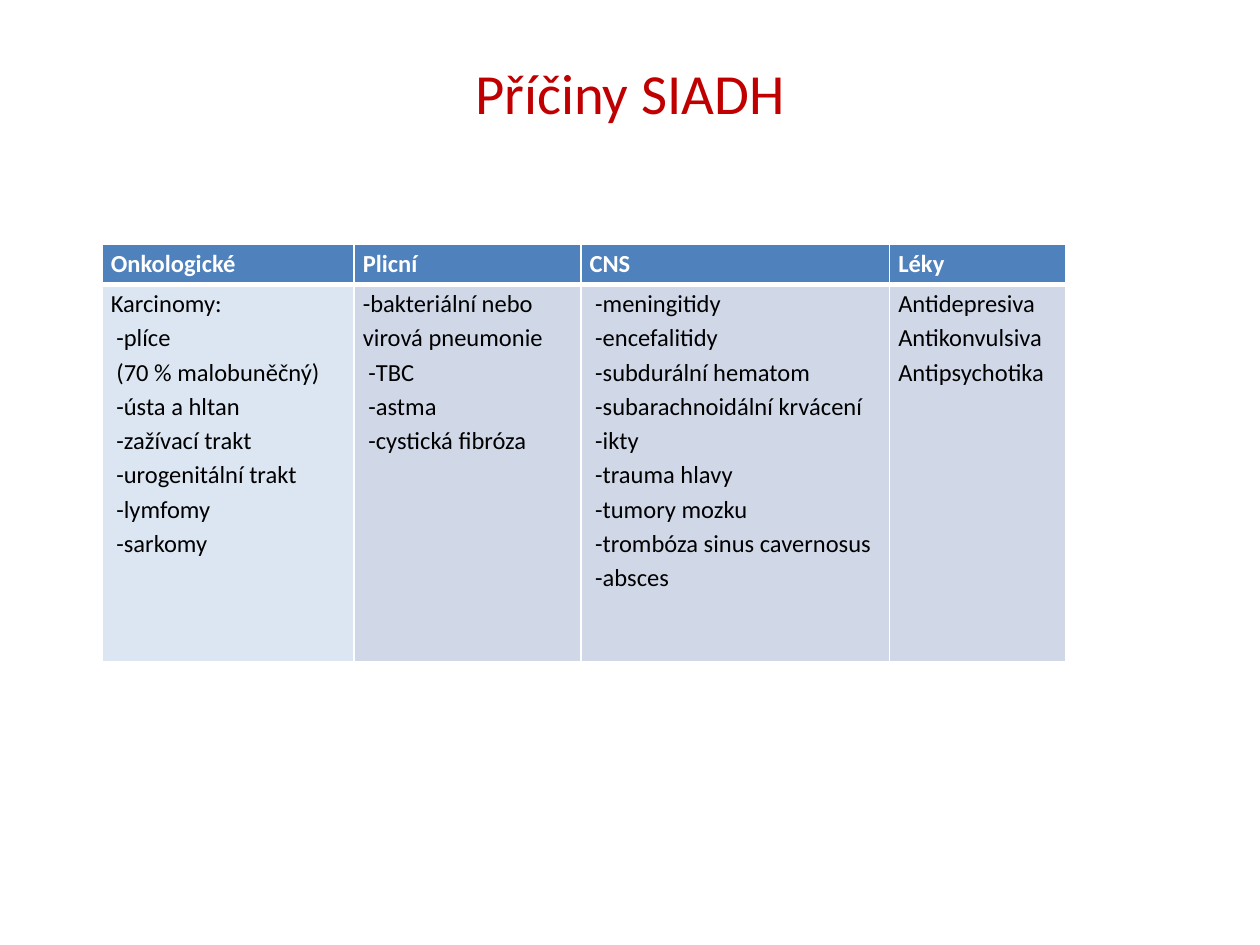
from lxml.etree import SubElement
from pptx import Presentation
from pptx.dml.color import RGBColor
from pptx.enum.text import MSO_ANCHOR, PP_ALIGN
from pptx.oxml.ns import qn
from pptx.util import Inches, Pt

COLUMNS = [
    ("Onkologické", 2, "DCE6F2",
     ["Karcinomy:", " -plíce", " (70 % malobuněčný)", " -ústa a hltan",
      " -zažívací trakt", " -urogenitální trakt", " -lymfomy", " -sarkomy"]),
    ("Plicní", 1.8, "D0D8E8",
     ["-bakteriální nebo virová pneumonie", " -TBC", " -astma",
      " -cystická fibróza"]),
    ("CNS", 2.45, "D0D8E8",
     [" -meningitidy", " -encefalitidy", " -subdurální hematom",
      " -subarachnoidální krvácení", " -ikty", " -trauma hlavy",
      " -tumory mozku", " -trombóza sinus cavernosus", " -absces"]),
    ("Léky", 1.4, "D0D8E8",
     ["Antidepresiva", "Antikonvulsiva", "Antipsychotika"]),
]
ROW_HEIGHTS = [0.32, 2.99]


def color(value):
    """Return the colour for a hex string."""
    return RGBColor.from_string(value)


def apply(target, formats):
    """Set every attribute named in a dict of formats."""
    for name, value in formats.items():
        setattr(target, name, value)


def write_run(p, text, size, fill, bold=False):
    """Add one formatted run to a paragraph."""
    r = p.add_run()
    r.text = text
    apply(r.font, {"name": "Calibri", "size": Pt(size), "bold": bold})
    r.font.color.rgb = color(fill)


def add_title(s, text):
    """Place and format the title placeholder."""
    sp = s.shapes.title
    apply(sp, {"left": Inches(0.5), "top": Inches(0.29),
               "width": Inches(9), "height": Inches(1.25)})
    tf = sp.text_frame
    apply(tf, {"vertical_anchor": MSO_ANCHOR.TOP, "margin_top": Inches(0.17),
               "word_wrap": True})
    p = tf.paragraphs[0]
    p.alignment = PP_ALIGN.CENTER
    write_run(p, text, 32.4, "C00000")


def set_borders(cell, widths):
    """Draw white cell borders from a dict of side and width in points."""
    tc_pr = cell._tc.get_or_add_tcPr()
    for side, width in widths.items():
        ln = SubElement(tc_pr, qn(f"a:ln{side}"), w=str(Pt(width)))
        fill = SubElement(ln, qn("a:solidFill"))
        SubElement(fill, qn("a:srgbClr"), val="FFFFFF")


def fill_cell(cell, lines, fill, font_color, bold, borders):
    """Write the lines of a cell and set its borders and fill."""
    apply(cell, {"margin_left": Inches(0.07), "margin_right": Inches(0.07),
                 "margin_top": 0, "margin_bottom": 0})
    set_borders(cell, borders)
    cell.fill.solid()
    cell.fill.fore_color.rgb = color(fill)
    tf = cell.text_frame
    for i, line in enumerate(lines):
        p = tf.add_paragraph() if i else tf.paragraphs[0]
        p.line_spacing = 1.15
        write_run(p, line, 14, font_color, bold)


def add_causes_table(s):
    """Add the table with one column for each group of causes."""
    width = sum(column[1] for column in COLUMNS)
    table = s.shapes.add_table(
        len(ROW_HEIGHTS), len(COLUMNS), Inches(0.81), Inches(1.94),
        Inches(width), Inches(sum(ROW_HEIGHTS))).table
    for row, height in zip(table.rows, ROW_HEIGHTS):
        row.height = Inches(height)
    for i, (heading, col_width, fill, causes) in enumerate(COLUMNS):
        table.columns[i].width = Inches(col_width)
        fill_cell(table.cell(0, i), [heading], "4F81BD", "FFFFFF", True,
                  {"L": 1, "R": 1, "T": 1, "B": 3})
        fill_cell(table.cell(1, i), causes, fill, "000000", False,
                  {"L": 1, "R": 1, "T": 3, "B": 1})


def main():
    """Build the slide and save it."""
    prs = Presentation()
    apply(prs, {"slide_width": Inches(10), "slide_height": Inches(7.5)})
    s = prs.slides.add_slide(prs.slide_layouts[5])
    add_title(s, "Příčiny SIADH")
    add_causes_table(s)
    prs.save("out.pptx")


if __name__ == "__main__":
    main()
